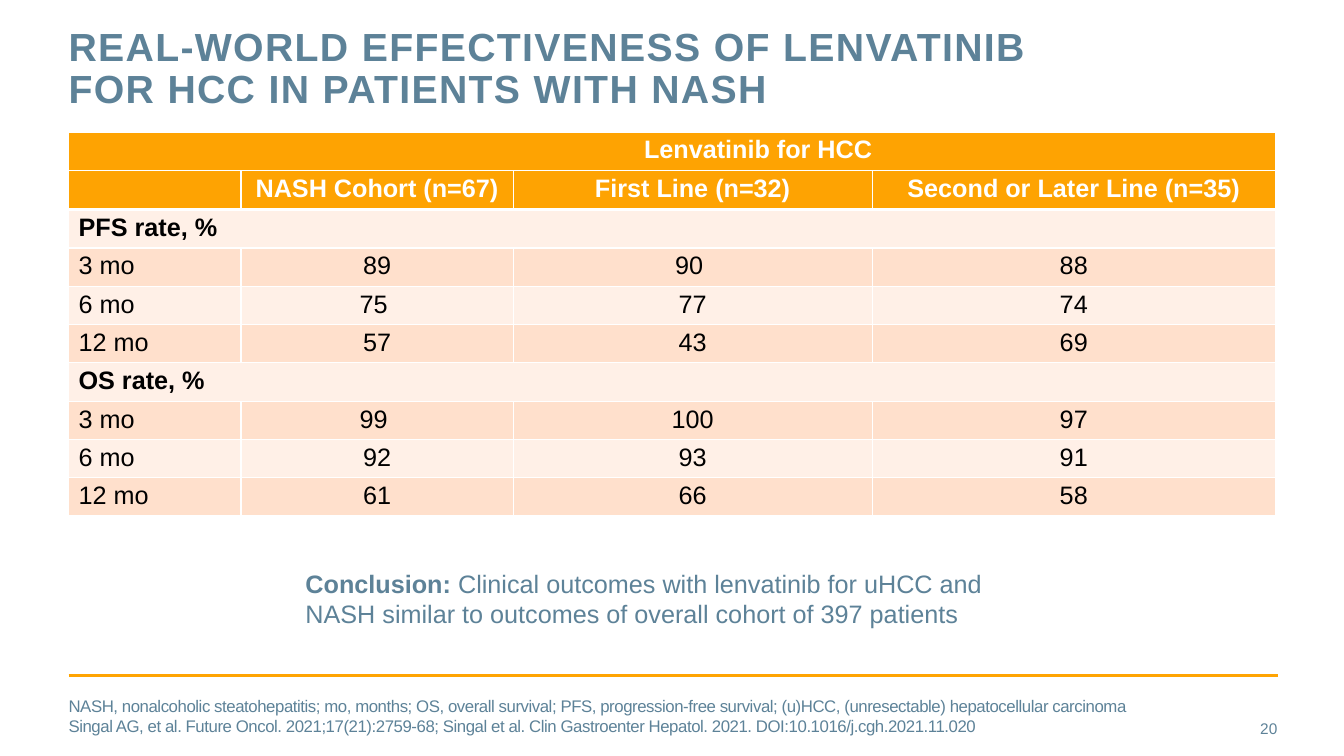
from lxml import etree
from pptx import Presentation
from pptx.dml.color import RGBColor
from pptx.enum import shapes, text
from pptx.oxml import ns
from pptx.util import Inches, Pt

# Content
TITLE = "REAL-WORLD EFFECTIVENESS OF LENVATINIB FOR HCC IN PATIENTS WITH NASH"
ROWS = [
    ("", "Lenvatinib for HCC"),
    ("", "NASH Cohort (n=67)", "First Line (n=32)", "Second or Later Line (n=35)"),
    ("PFS rate, %",),
    ("3 mo", "89", "90 ", "88"),
    ("6 mo", "75 ", "77", "74"),
    ("12 mo", "57", "43", "69"),
    ("OS rate, %",),
    ("3 mo", "99 ", "100", "97"),
    ("6 mo", "92", "93", "91"),
    ("12 mo", "61", "66", "58"),
]
CONCLUSION = [[
    ("Conclusion: ", True),
    ("Clinical outcomes with lenvatinib for uHCC and NASH similar to "
     "outcomes of overall cohort of 397 patients", False),
]]
NOTES = [
    [("NASH, nonalcoholic steatohepatitis; mo, months; OS, overall survival; "
      "PFS, progression-free survival; (u)HCC, (unresectable) hepatocellular carcinoma", False)],
    [("Singal AG, et al. Future Oncol. 2021;17(21):2759-68; Singal et al. "
      "Clin Gastroenter Hepatol. 2021. DOI:10.1016/j.cgh.2021.11.020", False)],
]
PAGE = "20"

# Style
FONT = "Arial"
SLATE = RGBColor(0x5D, 0x82, 0x98)
ORANGE = RGBColor(0xFE, 0xA3, 0x02)
RULE = RGBColor(0xFF, 0xA4, 0x02)
PALE = RGBColor(0xFF, 0xF0, 0xE7)
PEACH = RGBColor(0xFF, 0xE0, 0xCC)
WHITE = RGBColor(0xFF, 0xFF, 0xFF)
BLACK = RGBColor(0, 0, 0)
LEFT, CENTER, RIGHT = text.PP_ALIGN.LEFT, text.PP_ALIGN.CENTER, text.PP_ALIGN.RIGHT
TOP, MIDDLE = text.MSO_ANCHOR.TOP, text.MSO_ANCHOR.MIDDLE

# Grid, in inches
EDGE = 0.68
COLS = [1.71, 2.7, 3.56, 4]
ROW = 0.38
HEADS = 2


def write(frame, paras, size=18, color=SLATE, align=LEFT, space=0, lead=None):
    """Fill a text frame with paragraphs of (text, bold) runs."""
    for i, runs in enumerate(paras):
        para = frame.add_paragraph() if i else frame.paragraphs[0]
        para.alignment = align
        if lead:
            para.line_spacing = Pt(lead)
        for words, bold in runs:
            run = para.add_run()
            run.text = words
            font = run.font
            font.name, font.size, font.bold = FONT, Pt(size), bold
            font.color.rgb = color
            if space:
                run._r.get_or_add_rPr().set("spc", str(round(space * 100)))


def place(shape, box, anchor=TOP):
    """Put a shape at its box and clear the insets of its text."""
    shape.left, shape.top, shape.width, shape.height = map(Inches, box)
    frame = shape.text_frame
    frame.word_wrap = True
    frame.auto_size = text.MSO_AUTO_SIZE.NONE
    frame.vertical_anchor = anchor
    frame.margin_left = frame.margin_right = frame.margin_top = frame.margin_bottom = 0
    return frame


def label(slide, box, paras, anchor=TOP, **style):
    write(place(slide.shapes.add_textbox(0, 0, 0, 0), box, anchor), paras, **style)


def border(cell, sides):
    """Draw white borders; sides maps L, R, T, B to a width in points."""
    props = cell._tc.get_or_add_tcPr()
    for i, (side, width) in enumerate(sides.items()):
        line = etree.Element(ns.qn("a:ln" + side), w=str(Pt(width)))
        if width:
            fill = etree.SubElement(line, ns.qn("a:solidFill"))
            etree.SubElement(fill, ns.qn("a:srgbClr"), val=str(WHITE))
        else:
            etree.SubElement(line, ns.qn("a:noFill"))
        props.insert(i, line)


def rates(slide):
    """Build the table of survival rates."""
    table = slide.shapes.add_table(
        len(ROWS), len(COLS), Inches(EDGE), Inches(1.31),
        Inches(sum(COLS)), Inches(ROW * len(ROWS))).table
    for col, width in zip(table.columns, COLS):
        col.width = Inches(width)
    for r, row in enumerate(ROWS):
        table.rows[r].height = Inches(ROW)
        head, group = r < HEADS, len(row) == 1
        for c in range(len(COLS)):
            cell = table.cell(r, c)
            cell.margin_top = cell.margin_bottom = Inches(0.04)
            cell.fill.solid()
            cell.fill.fore_color.rgb = ORANGE if head else PEACH if r % 2 else PALE
            border(cell, {
                "L": 0 if (r, c) == (0, 1) else 1,
                "R": 0 if (r, c) == (0, 0) else 1,
                "T": 2.25 if r == HEADS else 1,
                "B": 2.25 if r == HEADS - 1 else 1,
            })
            if c < len(row) and row[c]:
                write(cell.text_frame, [[(row[c], head or group)]],
                      color=WHITE if head else BLACK, align=CENTER if c else LEFT)
        # The last filled cell of a short row spans the rest
        if len(row) < len(COLS):
            table.cell(r, len(row) - 1).merge(table.cell(r, len(COLS) - 1))


def main():
    deck = Presentation()
    deck.slide_width, deck.slide_height = Inches(13.33), Inches(7.5)
    slide = deck.slides.add_slide(deck.slide_layouts[5])

    # Rule above the footer
    rule = slide.shapes.add_connector(
        shapes.MSO_CONNECTOR.STRAIGHT, Inches(EDGE), Inches(6.7), Inches(12.68), Inches(6.7))
    rule.line.color.rgb, rule.line.width = RULE, Pt(2)
    etree.SubElement(rule._element.spPr, ns.qn("a:effectLst"))

    # Title, table and texts
    write(place(slide.shapes.title, (EDGE, 0.27, 10.01, 0.88)), [[(TITLE, True)]],
          size=28, space=1, lead=30)
    rates(slide)
    label(slide, (3.03, 5.64, 7.26, 0.71), CONCLUSION)
    label(slide, (EDGE, 6.9, 11.89, 0.4), NOTES, MIDDLE, size=12, space=-0.3)
    label(slide, (11.81, 7.03, 0.86, 0.4), [[(PAGE, False)]], MIDDLE, size=11, align=RIGHT)

    deck.save("out.pptx")


if __name__ == "__main__":
    main()
